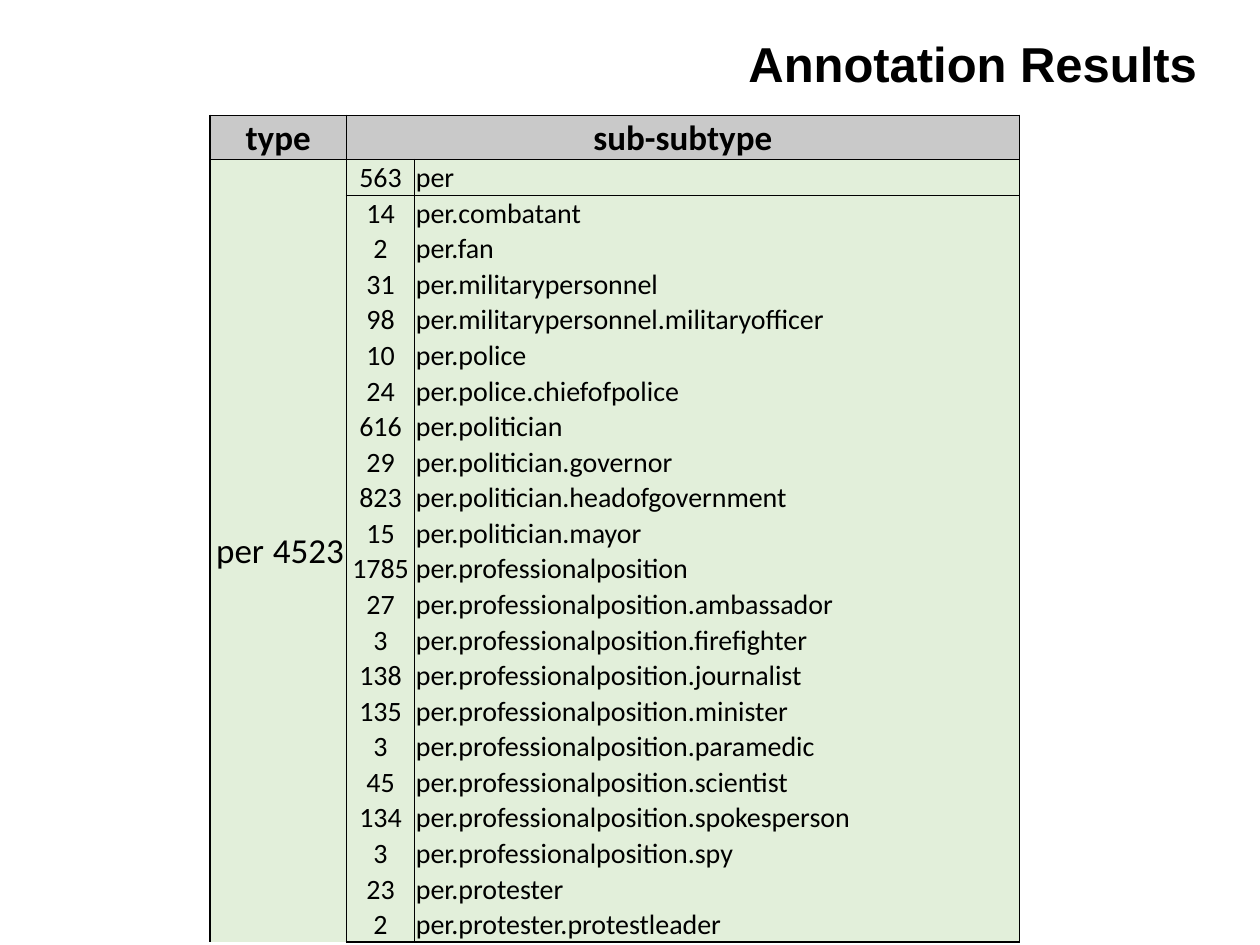
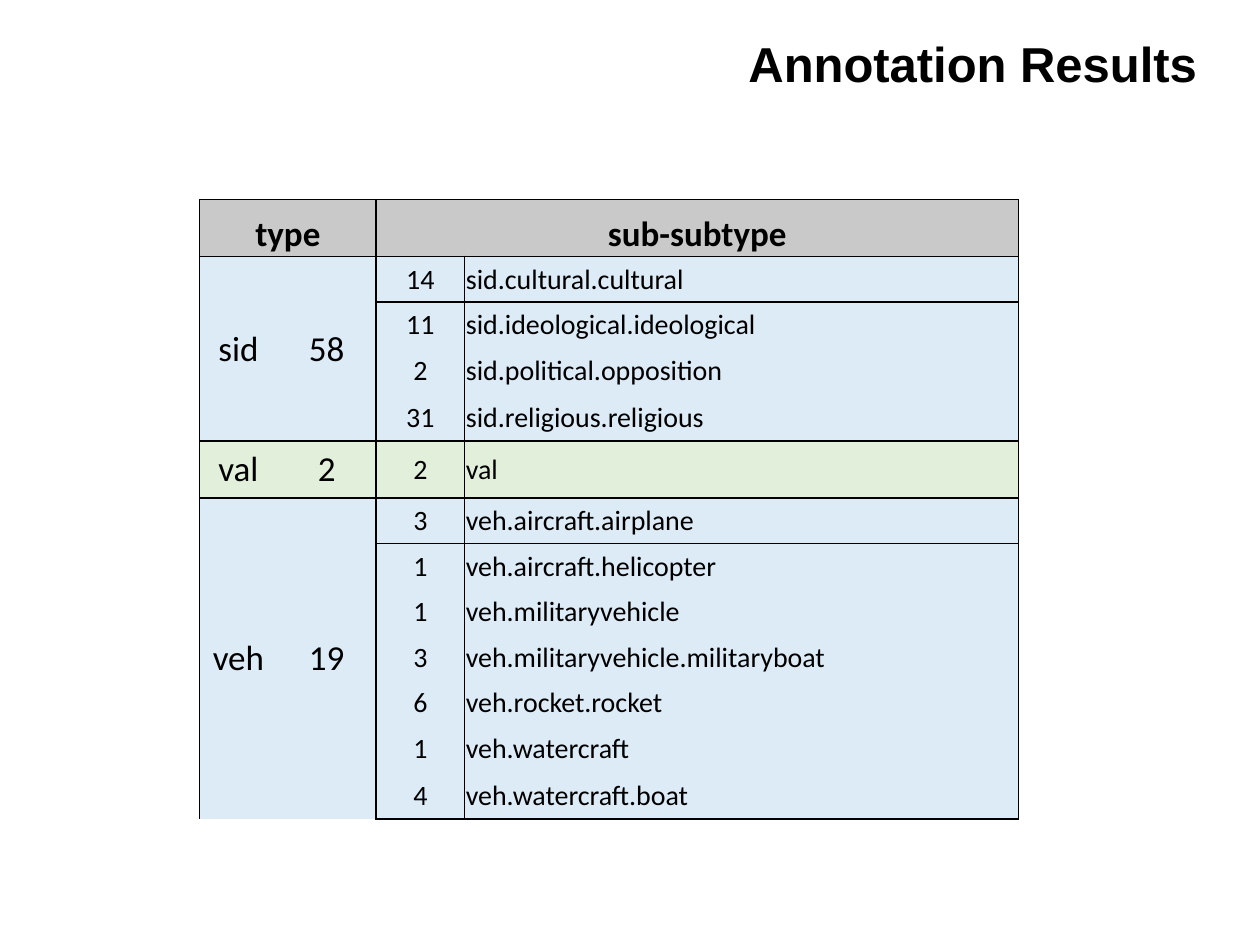
from lxml.etree import SubElement
from pptx import Presentation
from pptx.dml.color import RGBColor
from pptx.enum.text import MSO_ANCHOR, MSO_AUTO_SIZE, PP_ALIGN
from pptx.oxml.ns import qn
from pptx.util import Pt

COLORS = {"ink": "000000", "header": "C9C9C9", "green": "E2EFDA", "blue": "DDEBF7"}
NO_STYLE = "{2D5ABB26-0587-4C30-8999-92F81FD0307C}"
TITLE_ONLY = 5

PERSONS = [
    (563, "per"),
    (14, "per.combatant"),
    (2, "per.fan"),
    (31, "per.militarypersonnel"),
    (98, "per.militarypersonnel.militaryofficer"),
    (10, "per.police"),
    (24, "per.police.chiefofpolice"),
    (616, "per.politician"),
    (29, "per.politician.governor"),
    (823, "per.politician.headofgovernment"),
    (15, "per.politician.mayor"),
    (1785, "per.professionalposition"),
    (27, "per.professionalposition.ambassador"),
    (3, "per.professionalposition.firefighter"),
    (138, "per.professionalposition.journalist"),
    (135, "per.professionalposition.minister"),
    (3, "per.professionalposition.paramedic"),
    (45, "per.professionalposition.scientist"),
    (134, "per.professionalposition.spokesperson"),
    (3, "per.professionalposition.spy"),
    (23, "per.protester"),
    (2, "per.protester.protestleader"),
]
SIDES = [
    (14, "sid.cultural.cultural"),
    (11, "sid.ideological.ideological"),
    (2, "sid.political.opposition"),
    (31, "sid.religious.religious"),
]
VALUES = [(2, "val")]
VEHICLES = [
    (3, "veh.aircraft.airplane"),
    (1, "veh.aircraft.helicopter"),
    (1, "veh.militaryvehicle"),
    (3, "veh.militaryvehicle.militaryboat"),
    (6, "veh.rocket.rocket"),
    (1, "veh.watercraft"),
    (4, "veh.watercraft.boat"),
]


class Deck:
    def __init__(self):
        self.presentation = Presentation()
        self.presentation.slide_width = Pt(720)
        self.presentation.slide_height = Pt(540)
        self.slide = None

    def add_slide(self, heading):
        layout = self.presentation.slide_layouts[TITLE_ONLY]
        self.slide = self.presentation.slides.add_slide(layout)
        title = self.slide.shapes.title
        title.left, title.top, title.width, title.height = Pt(264), Pt(16), Pt(420), Pt(62.5)
        frame = title.text_frame
        frame.auto_size = MSO_AUTO_SIZE.NONE
        frame.vertical_anchor = MSO_ANCHOR.TOP
        frame.margin_left = frame.margin_right = frame.margin_bottom = 0
        frame.margin_top = Pt(3)
        self.add_text(frame, heading, 28, PP_ALIGN.RIGHT, bold=True, font="Arial")

    def add_text(self, frame, text, size, align, bold=False, font="Calibri"):
        paragraph = frame.paragraphs[0]
        paragraph.alignment = align
        run = paragraph.add_run()
        run.text = str(text)
        run.font.size = Pt(size)
        run.font.name = font
        run.font.bold = bold
        run.font.color.rgb = RGBColor.from_string(COLORS["ink"])

    def style_cell(self, cell, color, sides, anchor=MSO_ANCHOR.MIDDLE):
        """Set fill, margins and 1 pt borders on the sides, given in the order L, R, T, B."""
        cell.margin_left = cell.margin_right = cell.margin_top = Pt(0.75)
        cell.margin_bottom = 0
        cell.vertical_anchor = anchor
        properties = cell._tc.get_or_add_tcPr()
        for side in sides:
            line = SubElement(properties, qn(f"a:ln{side}"), w=str(Pt(1)))
            SubElement(SubElement(line, qn("a:solidFill")), qn("a:srgbClr"), val=COLORS["ink"])
        cell.fill.solid()
        cell.fill.fore_color.rgb = RGBColor.from_string(COLORS[color])

    def add_header(self, table):
        for column in range(4):
            self.style_cell(table.cell(0, column), "header", "LRTB", MSO_ANCHOR.BOTTOM)
        for column, label in ((0, "type"), (2, "sub-subtype")):
            cell = table.cell(0, column)
            cell.merge(table.cell(0, column + 1))
            self.add_text(cell.text_frame, label, 20, PP_ALIGN.CENTER, bold=True)

    def add_group(self, table, first, color, subtypes):
        """Fill the rows of one type, whose total is the sum of its subtypes."""
        last = first + len(subtypes) - 1
        for row, (count, subtype) in enumerate(subtypes, first):
            edges = "T" * (row == first) + "B" * (row == last)
            for column, side in enumerate("LRLR"):
                self.style_cell(table.cell(row, column), color, side + edges)
            self.add_text(table.cell(row, 2).text_frame, count, 16, PP_ALIGN.CENTER)
            self.add_text(table.cell(row, 3).text_frame, subtype, 16, PP_ALIGN.LEFT)
        type_name = subtypes[0][1].split(".")[0]
        total = sum(count for count, _ in subtypes)
        for column, text in enumerate((type_name, total)):
            cell = table.cell(first, column)
            if last > first:
                cell.merge(table.cell(last, column))
            self.add_text(cell.text_frame, text, 20, PP_ALIGN.CENTER)

    def add_counts(self, left, top, height, widths, row_heights, groups):
        """Add a table of types; row_heights holds the header, inner and last row of a group."""
        header, inner, final = row_heights
        heights = [header]
        for _, subtypes in groups:
            several = len(subtypes) > 1
            heights += [inner] * (len(subtypes) - 1) + [final if several else header]
        graphic = self.slide.shapes.add_table(
            len(heights), len(widths), Pt(left), Pt(top), Pt(sum(widths)), Pt(height))
        table = graphic.table
        for style in graphic.element.iter(qn("a:tableStyleId")):
            style.text = NO_STYLE
        table.first_row = table.horz_banding = False
        for column, width in zip(table.columns, widths):
            column.width = Pt(width)
        for row, row_height in zip(table.rows, heights):
            row.height = Pt(row_height)
        graphic.height = Pt(height)
        self.add_header(table)
        first = 1
        for color, subtypes in groups:
            self.add_group(table, first, color, subtypes)
            first += len(subtypes)


def main():
    deck = Deck()
    deck.add_slide("Annotation Results")
    deck.add_counts(120, 66, 457, (34.5, 43.5, 39, 345.5), (21, 16.5, 17),
                    [("green", PERSONS)])
    deck.add_slide("Annotation Results")
    deck.add_counts(114, 114, 355, (44.5, 56.5, 50.5, 316.5), (32.5, 26, 27.5),
                    [("blue", SIDES), ("green", VALUES), ("blue", VEHICLES)])
    deck.presentation.save("out.pptx")


if __name__ == "__main__":
    main()
